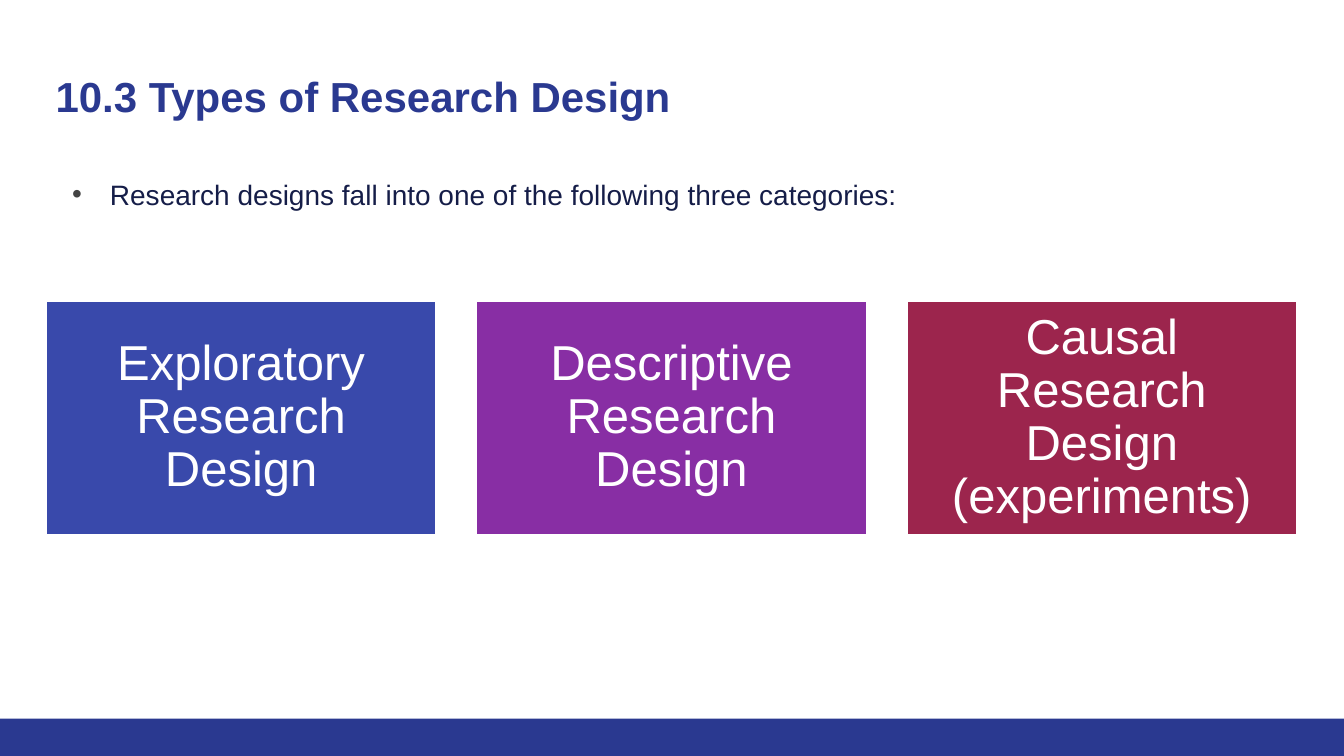
import pptx
import pptx.util
import pptx.dml.color
import pptx.enum.shapes
import pptx.enum.text
import pptx.oxml
import pptx.oxml.ns
from pptx.util import Cm, Pt

HEADING = "10.3 Types of Research Design"
INTRO = "Research designs fall into one of the following three categories:"
DESIGNS = [
    ("Exploratory Research Design", "3949AB"),
    ("Descriptive Research Design", "882EA4"),
    ("Causal Research Design (experiments)", "9C254D"),
]
NAVY, INK, GREY, WHITE = "2A3990", "151D48", "434343", "FFFFFF"

SLIDE_WIDTH, SLIDE_HEIGHT = Cm(33.87), Cm(19.05)
FOOTER_HEIGHT = Cm(0.94)
MARGIN = Cm(1.15)
CONTENT_WIDTH = Cm(31.55)
CARD_TOP, CARD_WIDTH, CARD_HEIGHT = Cm(7.57), Cm(9.86), Cm(5.92)
CARD_STEP = (CONTENT_WIDTH - CARD_WIDTH) // (len(DESIGNS) - 1)


def rgb(hex_colour):
    return pptx.dml.color.RGBColor.from_string(hex_colour)


def place(part, left, top, width, height):
    part.left, part.top, part.width, part.height = left, top, width, height


def write(part, words, size, colour, inset, align, anchor, spacing, bold=False):
    frame = part.text_frame
    frame.text = words
    frame.word_wrap = True
    frame.auto_size = pptx.enum.text.MSO_AUTO_SIZE.NONE
    frame.vertical_anchor = anchor
    frame.margin_left = frame.margin_right = inset
    frame.margin_top = frame.margin_bottom = inset
    paragraph = frame.paragraphs[0]
    paragraph.alignment = align
    paragraph.line_spacing = spacing
    paragraph.space_before = paragraph.space_after = Pt(0)
    paragraph.font.name = "Arial"
    paragraph.font.size = Pt(size)
    paragraph.font.bold = bold
    paragraph.font.color.rgb = rgb(colour)
    return paragraph


def add_bullet(paragraph, colour, indent, hanging):
    properties = paragraph._p.get_or_add_pPr()
    properties.set("marL", str(indent))
    properties.set("indent", str(-hanging))
    defaults = properties.find(pptx.oxml.ns.qn("a:defRPr"))
    namespace = pptx.oxml.ns.nsdecls("a")
    for xml in (
        f'<a:buClr {namespace}><a:srgbClr val="{colour}"/></a:buClr>',
        f'<a:buFont {namespace} typeface="Arial"/>',
        f'<a:buChar {namespace} char="•"/>',
    ):
        defaults.addprevious(pptx.oxml.parse_xml(xml))


def add_block(slide, left, top, width, height, colour):
    block = slide.shapes.add_shape(
        pptx.enum.shapes.MSO_SHAPE.RECTANGLE, left, top, width, height)
    block.shadow.inherit = False
    block.fill.solid()
    block.fill.fore_color.rgb = rgb(colour)
    block.line.fill.background()
    return block


def main():
    deck = pptx.Presentation()
    deck.slide_width, deck.slide_height = SLIDE_WIDTH, SLIDE_HEIGHT
    slide = deck.slides.add_slide(deck.slide_layouts[1])
    align, anchor = pptx.enum.text.PP_ALIGN, pptx.enum.text.MSO_ANCHOR

    add_block(slide, 0, SLIDE_HEIGHT - FOOTER_HEIGHT, SLIDE_WIDTH, FOOTER_HEIGHT, NAVY)

    heading = slide.shapes.title
    place(heading, MARGIN, Cm(1.52), CONTENT_WIDTH, Cm(2.26))
    write(heading, HEADING, 30, NAVY, Cm(0.25), align.LEFT, anchor.TOP, 1.0, bold=True)

    intro = slide.placeholders[1]
    place(intro, MARGIN, Cm(4.09), CONTENT_WIDTH, Cm(12.98))
    line = write(intro, INTRO, 20, INK, Cm(0.25), align.LEFT, anchor.TOP, 1.15)
    add_bullet(line, GREY, Cm(1.37), Cm(0.95))

    for column, (design, colour) in enumerate(DESIGNS):
        card = add_block(slide, MARGIN + column * CARD_STEP, CARD_TOP,
                         CARD_WIDTH, CARD_HEIGHT, colour)
        card.line.color.rgb = rgb(WHITE)
        card.line.width = Pt(2)
        write(card, design, 35, WHITE, Cm(0.38), align.CENTER, anchor.MIDDLE, 0.9)

    deck.save("out.pptx")


if __name__ == "__main__":
    main()
